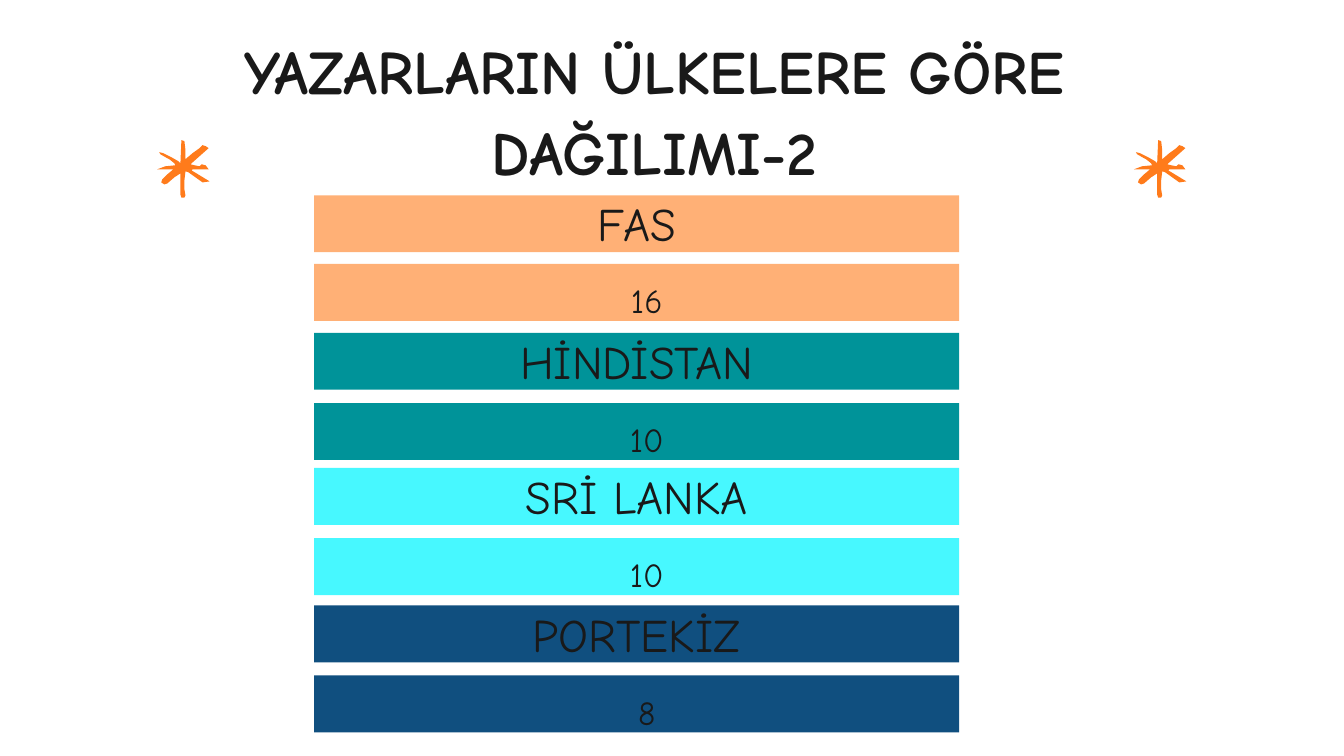
from typing import NamedTuple

from pptx import Presentation
from pptx.dml.color import RGBColor
from pptx.enum.shapes import MSO_SHAPE
from pptx.enum.text import MSO_ANCHOR, MSO_AUTO_SIZE, PP_ALIGN
from pptx.util import Pt

FONT = "Comic Neue"
COLORS = {
    "text": "191919",
    "star": "FF7B1B",
    "peach": "FFB076",
    "teal": "009399",
    "cyan": "47F8FF",
    "navy": "104F7F",
}
BAR_LEFT, BAR_WIDTH, BAR_HEIGHT = 224.4, 460.8, 40.7
VALUE_INDENT = 14.4
STAR_TOP, STAR_UNIT = 100.1, 0.72
STAR_LEFTS = (112.3, 810)
STAR_OUTLINE = [
    (24, 0), (27, 1), (28, 10), (28, 19), (35, 13), (42, 8), (45, 5), (48, 6),
    (51, 8), (33, 24), (37, 25), (42, 26), (44, 24), (48, 25), (51, 29),
    (35, 29), (34, 30), (52, 41), (45, 42), (38, 37), (31, 32), (28, 31),
    (27, 40), (27, 49), (28, 55), (27, 57), (24, 57), (23, 54), (23, 36),
    (23, 33), (17, 37), (10, 43), (7, 44), (4, 42), (5, 39), (10, 34),
    (16, 29), (0, 29), (8, 26), (18, 25), (17, 23), (12, 19), (10, 18),
    (3, 14), (2, 12), (6, 13), (14, 17), (21, 21), (23, 23),
]


class Country(NamedTuple):
    name: str
    authors: str
    color: str
    name_top: float
    value_top: float


COUNTRIES = [
    Country("FAS", "16", "peach", 139.5, 188.5),
    Country("HİNDİSTAN", "10", "teal", 237.7, 287.9),
    Country("SRİ LANKA", "10", "cyan", 334.2, 384.4),
    Country("PORTEKİZ", "8", "navy", 432.5, 482.5),
]


def rgb(name: str) -> RGBColor:
    return RGBColor.from_string(COLORS[name])


def write(sp, text: str, size: float, spacing: float = 1.0, bold: bool = False):
    """Fill a shape with one centred run at its top edge and return the paragraph."""
    tf = sp.text_frame
    tf.word_wrap = True
    tf.auto_size = MSO_AUTO_SIZE.NONE
    tf.vertical_anchor = MSO_ANCHOR.TOP
    tf.margin_left = tf.margin_right = tf.margin_top = tf.margin_bottom = Pt(0)
    p = tf.paragraphs[0]
    p.alignment = PP_ALIGN.CENTER
    p.line_spacing = spacing
    p.space_before = Pt(0)
    r = p.add_run()
    r.text = text
    r.font.name = FONT
    r.font.size = Pt(size)
    r.font.bold = bold
    r.font.color.rgb = rgb("text")
    return p


def paint(sp, color: str) -> None:
    sp.shadow.inherit = False
    sp.fill.solid()
    sp.fill.fore_color.rgb = rgb(color)
    sp.line.fill.background()


def add_title(s, text: str) -> None:
    sp = s.shapes.title
    sp.left, sp.top, sp.width, sp.height = Pt(152.6), Pt(18), Pt(630), Pt(117.4)
    write(sp, text, 44, spacing=1.1, bold=True)


def add_star(s, left: float) -> None:
    builder = s.shapes.build_freeform(*STAR_OUTLINE[0], scale=Pt(STAR_UNIT))
    builder.add_line_segments(STAR_OUTLINE[1:], close=True)
    paint(builder.convert_to_shape(Pt(left), Pt(STAR_TOP)), "star")


def add_bar(group, top: float, color: str):
    sp = group.shapes.add_shape(MSO_SHAPE.RECTANGLE, Pt(BAR_LEFT), Pt(top),
                                Pt(BAR_WIDTH), Pt(BAR_HEIGHT))
    paint(sp, color)
    return sp


def add_country(s, country: Country) -> None:
    group = s.shapes.add_group_shape()
    value = add_bar(group, country.value_top, country.color)
    p = write(value, country.authors, 24, spacing=1.4)
    p.level = 1
    pPr = p._p.get_or_add_pPr()
    pPr.set("marL", str(Pt(VALUE_INDENT)))
    pPr.set("indent", "0")
    write(add_bar(group, country.name_top, country.color), country.name, 33.3)


def main() -> None:
    prs = Presentation()
    prs.slide_width, prs.slide_height = Pt(960), Pt(540)
    s = prs.slides.add_slide(prs.slide_layouts[5])
    add_title(s, "YAZARLARIN ÜLKELERE GÖRE DAĞILIMI-2")
    for left in STAR_LEFTS:
        add_star(s, left)
    for country in COUNTRIES:
        add_country(s, country)
    prs.save("out.pptx")


if __name__ == "__main__":
    main()
